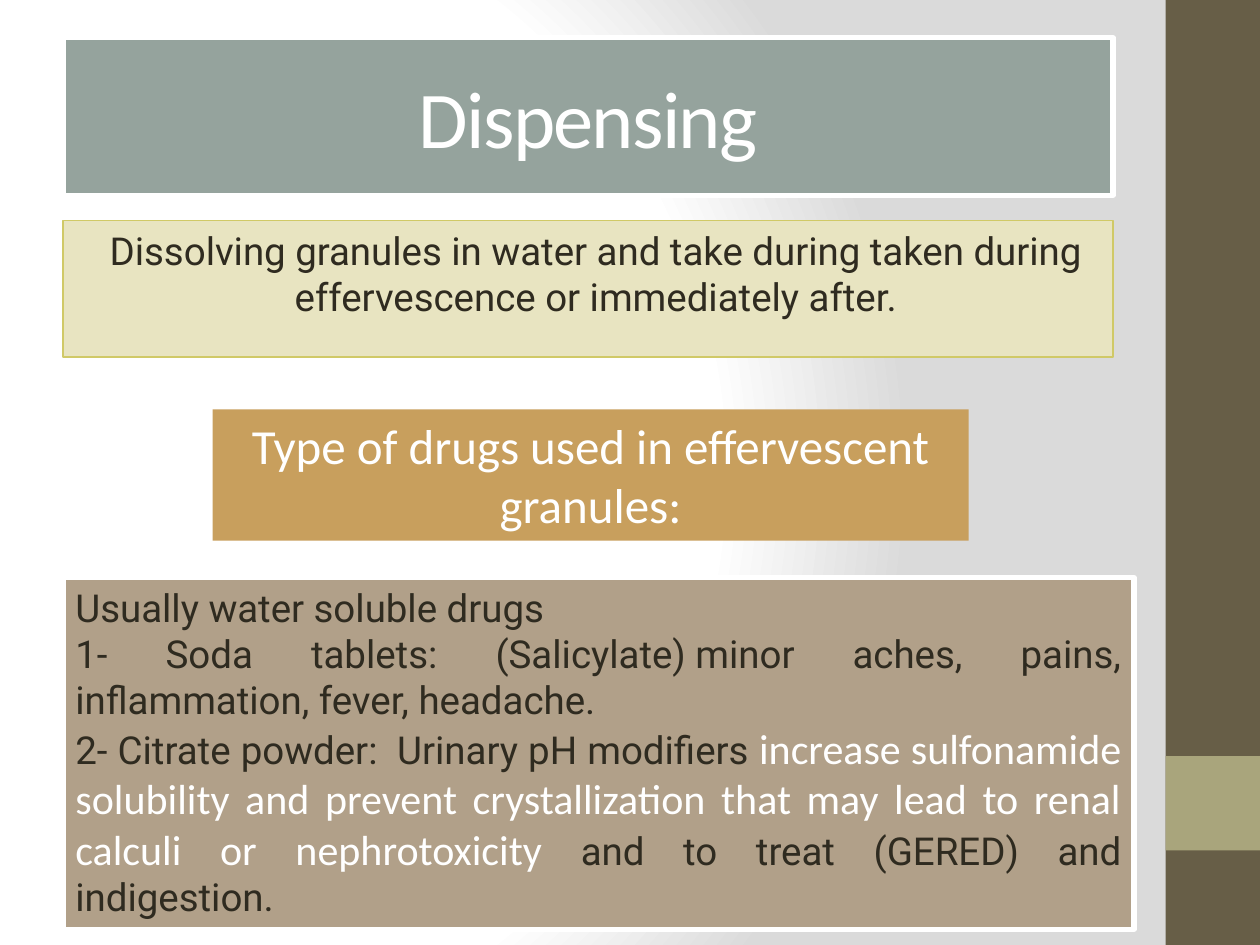
from pptx import Presentation
from pptx.dml.color import RGBColor
from pptx.enum.shapes import MSO_SHAPE
from pptx.enum.text import MSO_ANCHOR, MSO_AUTO_SIZE, PP_ALIGN
from pptx.oxml import parse_xml
from pptx.oxml.ns import nsdecls, qn
from pptx.util import Pt

WHITE, DARK = "FFFFFF", "2F2B20"
CALIBRI, ROBOTO = "Calibri", "Roboto"
CENTER, LEFT, JUSTIFY = PP_ALIGN.CENTER, PP_ALIGN.LEFT, PP_ALIGN.JUSTIFY

GRADIENT = [(0, WHITE), (75, WHITE), (100, "DADADA")]
SIDE_BARS = [((666, 0, 54, 540), "675E47"), ((666, 432, 54, 54), "A9A57C")]
TITLE = "Dispensing"
USAGE = ("Dissolving granules in water and take during taken during "
         "effervescence or immediately after.")
HEADING = "Type of drugs used in effervescent granules:"
NOTE = dict(size=22, font=ROBOTO, color=DARK)
EFFECT = dict(size=24, font=CALIBRI, color=WHITE)
DRUGS = [
    (LEFT, [("Usually water soluble drugs", NOTE)]),
    (JUSTIFY, [("1- Soda tablets: (Salicylate)\u00a0minor aches, pains, "
                "inflammation, fever, headache.", NOTE)]),
    (JUSTIFY, [("2- Citrate powder: \u00a0Urinary pH modifiers ", NOTE),
               ("increase sulfonamide solubility and prevent crystallization "
                "that may lead to renal calculi or nephrotoxicity", EFFECT),
               (" and to treat (GERED) and indigestion.", NOTE)]),
]


def rgb(value):
    return RGBColor.from_string(value)


def add_text(p, text, size, font, color):
    r = p.add_run()
    r.text = text
    r.font.size, r.font.name = Pt(size), font
    r.font.color.rgb = rgb(color)
    return r


def style(sp, box, fill, line=None, width=0, anchor=MSO_ANCHOR.TOP):
    """Place and colour a shape, and return its text frame."""
    sp.left, sp.top, sp.width, sp.height = map(Pt, box)
    sp.fill.solid()
    sp.fill.fore_color.rgb = rgb(fill)
    if line:
        sp.line.color.rgb = rgb(line)
        sp.line.width = Pt(width)
    else:
        sp.line.fill.background()
    tf = sp.text_frame
    tf.word_wrap = True
    tf.auto_size = MSO_AUTO_SIZE.NONE
    tf.vertical_anchor = anchor
    return tf


def add_box(s, box, fill, **kw):
    sp = s.shapes.add_shape(MSO_SHAPE.RECTANGLE, *map(Pt, box))
    sp.shadow.inherit = False
    return style(sp, box, fill, **kw)


def set_background(s):
    s.background.fill.gradient()
    old = s.element.find(".//" + qn("a:gradFill"))
    stops = "".join(f'<a:gs pos="{pos * 1000}"><a:srgbClr val="{c}"/></a:gs>'
                    for pos, c in GRADIENT)
    old.getparent().replace(old, parse_xml(
        f'<a:gradFill {nsdecls("a")} rotWithShape="1"><a:gsLst>{stops}</a:gsLst>'
        '<a:path path="circle"><a:fillToRect l="20000" t="50000" r="100000" '
        'b="50000"/></a:path></a:gradFill>'))


prs = Presentation()
prs.slide_width, prs.slide_height = Pt(720), Pt(540)
s = prs.slides.add_slide(prs.slide_layouts[1])
set_background(s)

for box, color in SIDE_BARS:
    add_box(s, box, color)

tf = style(s.shapes.title, (36, 21.6, 600, 90), "95A39D", line=WHITE, width=3,
           anchor=MSO_ANCHOR.MIDDLE)
p = tf.paragraphs[0]
p.alignment = CENTER
r = add_text(p, TITLE, 46, CALIBRI, WHITE)
r._r.get_or_add_rPr().set("spc", "-100")

tf = style(s.placeholders[1], (36, 126, 600, 78), "E8E4C1", line="D0C967", width=1)
p = tf.paragraphs[0]
p.alignment, p.space_before = CENTER, Pt(0)
pPr = p._p.get_or_add_pPr()
pPr.set("marL", str(Pt(9)))
pPr.set("indent", "0")
pPr.append(parse_xml(f'<a:buNone {nsdecls("a")}/>'))
add_text(p, USAGE, **NOTE)

tf = add_box(s, (36, 330, 612, 201), "B1A089", line=WHITE, width=3)
for i, (align, runs) in enumerate(DRUGS):
    p = tf.add_paragraph() if i else tf.paragraphs[0]
    p.alignment = align
    for text, look in runs:
        add_text(p, text, **look)

tf = add_box(s, (121.5, 234, 432, 75), "C89F5D")
p = tf.paragraphs[0]
p.alignment = CENTER
add_text(p, HEADING, 28, CALIBRI, WHITE)

prs.save("out.pptx")
